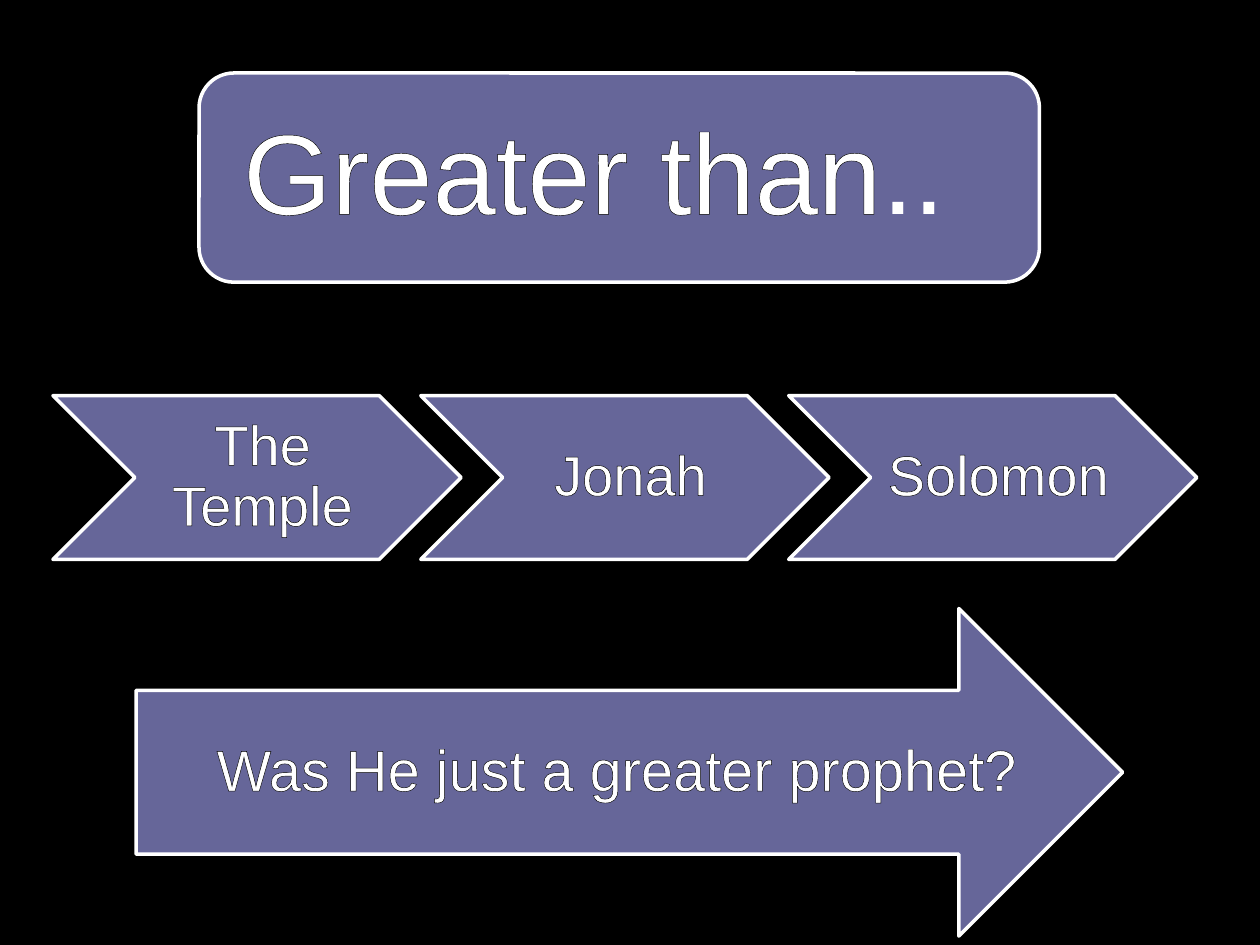
from lxml import etree
from pptx import Presentation
from pptx.dml.color import RGBColor
from pptx.enum import shapes, text
from pptx.oxml import ns
from pptx.util import Inches, Pt

BLACK = RGBColor(0, 0, 0)
WHITE = RGBColor(255, 255, 255)
SLATE = RGBColor(0x66, 0x66, 0x99)
FONT = "Arial"

# Each run is (wording, outline width in points)
HEADING = [("Greater than", 0.75), ("..", 0)]
COMPARISONS = ["The Temple", "Jonah", "Solomon"]
QUESTION = [("Was He just a greater prophet?", 0.25)]

HEADING_BOX = (1.58, 0.58, 6.67, 1.66)
HEADING_MARGIN = 0.08
CHEVRON_LEFT, CHEVRON_TOP, CHEVRON_STEP = 0.42, 3.14, 2.92
CHEVRON_WIDTH, CHEVRON_HEIGHT = 3.24, 1.3
ARROW_BOX = (1.08, 4.83, 7.83, 2.6)


def add_panel(slide, preset, box):
    panel = slide.shapes.add_shape(preset, *map(Inches, box))
    panel.shadow.inherit = False
    panel.fill.solid()
    panel.fill.fore_color.rgb = SLATE
    panel.line.color.rgb = WHITE
    panel.line.width = Pt(2)
    return panel


def outline_letters(run, width):
    """Put a black contour around the run's letters."""
    line = etree.Element(ns.qn("a:ln"), w=str(Pt(width)))
    fill = etree.SubElement(line, ns.qn("a:solidFill"))
    etree.SubElement(fill, ns.qn("a:srgbClr"), val=str(BLACK))
    run.font._element.insert(0, line)


def write(shape, runs, size, align, insets):
    frame = shape.text_frame
    frame.word_wrap = True
    frame.auto_size = text.MSO_AUTO_SIZE.NONE
    frame.vertical_anchor = text.MSO_ANCHOR.MIDDLE
    (frame.margin_left, frame.margin_top,
     frame.margin_right, frame.margin_bottom) = map(Inches, insets)
    paragraph = frame.paragraphs[0]
    paragraph.alignment = align
    paragraph.line_spacing = 0.9
    for wording, outline in runs:
        run = paragraph.add_run()
        run.text = wording
        run.font.name = FONT
        run.font.size = Pt(size)
        run.font.color.rgb = WHITE
        if outline:
            outline_letters(run, outline)


def main():
    deck = Presentation()
    deck.slide_width, deck.slide_height = Inches(10), Inches(7.5)
    slide = deck.slides.add_slide(deck.slide_layouts.get_by_name("Title Only"))
    slide.background.fill.solid()
    slide.background.fill.fore_color.rgb = BLACK

    for i, name in enumerate(COMPARISONS):
        left = CHEVRON_LEFT + i * CHEVRON_STEP
        chevron = add_panel(slide, shapes.MSO_SHAPE.CHEVRON,
                            (left, CHEVRON_TOP, CHEVRON_WIDTH, CHEVRON_HEIGHT))
        # Narrow side insets keep the longest name on one line
        write(chevron, [(name, 0.75)], 32, text.PP_ALIGN.CENTER,
              (0.1, 0.05, 0.01, 0.05))

    heading_panel = add_panel(slide, shapes.MSO_SHAPE.ROUNDED_RECTANGLE, HEADING_BOX)
    heading = slide.shapes.title
    left, top, width, height = HEADING_BOX
    heading.left, heading.top = Inches(left + HEADING_MARGIN), Inches(top + HEADING_MARGIN)
    heading.width = Inches(width - 2 * HEADING_MARGIN)
    heading.height = Inches(height - 2 * HEADING_MARGIN)
    write(heading, HEADING, 65, text.PP_ALIGN.LEFT, (0.27,) * 4)
    # The heading is written on its panel, so the panel goes behind it
    heading._element.addprevious(heading_panel._element)

    arrow = add_panel(slide, shapes.MSO_SHAPE.RIGHT_ARROW, ARROW_BOX)
    write(arrow, QUESTION, 33, text.PP_ALIGN.JUSTIFY, (0.64, 0.37, 0.12, 0.37))

    deck.save("out.pptx")


if __name__ == "__main__":
    main()
